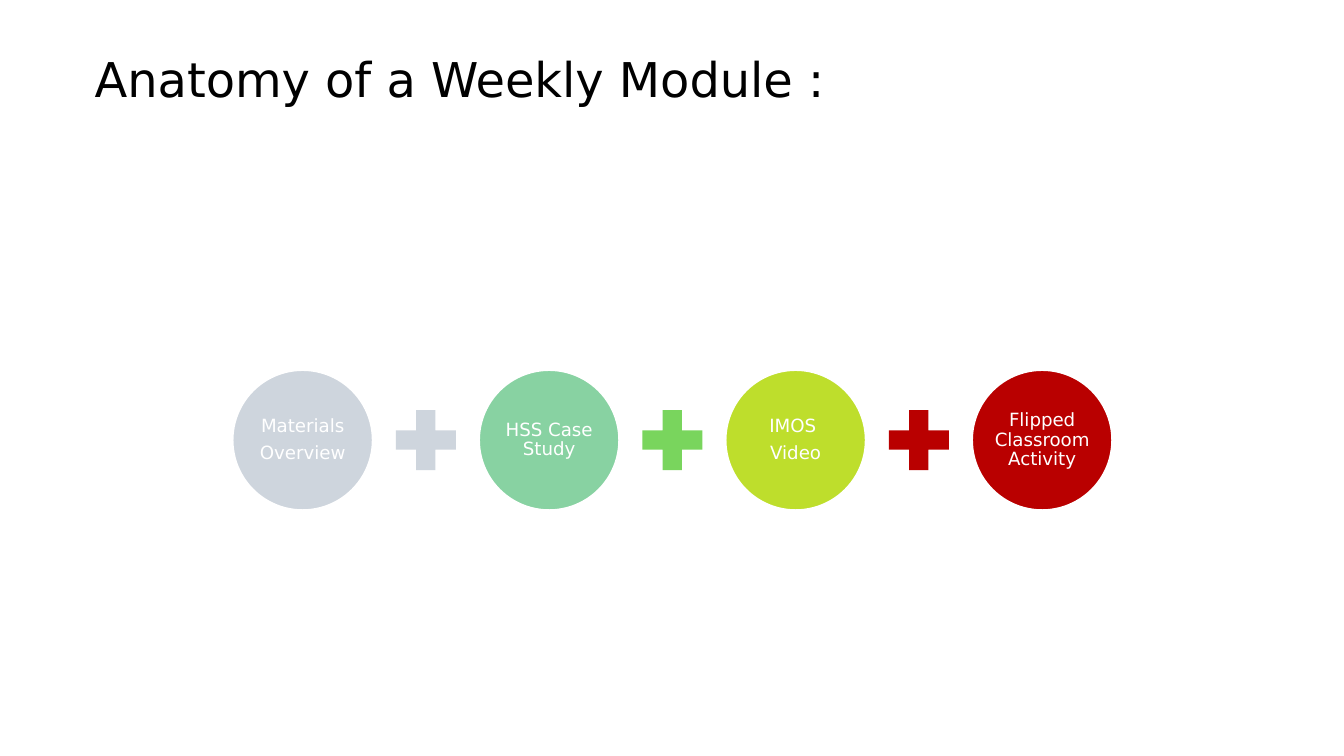
from pptx import Presentation
from pptx.dml.color import RGBColor
from pptx.enum.shapes import MSO_SHAPE
from pptx.enum.text import MSO_ANCHOR, PP_ALIGN
from pptx.util import Pt

FONT = "DejaVu Sans"
# Circle text, circle colour, colour of the plus that follows
STEPS = [
    (["Materials", "Overview"], "CED5DD", "CED5DD"),
    (["HSS Case Study"], "88D2A2", "79D55D"),
    (["IMOS ", "Video"], "BEDE2C", "B90000"),
    (["Flipped Classroom Activity"], "B90000", None),
]


def color(value):
    return RGBColor.from_string(value)


def style_font(p, size, value):
    for r in p.runs:
        r.font.name = FONT
        r.font.size = Pt(size)
        r.font.color.rgb = color(value)


def add_filled(s, kind, x, y, size, fill):
    sp = s.shapes.add_shape(kind, Pt(x), Pt(y), Pt(size), Pt(size))
    sp.shadow.inherit = False
    sp.fill.solid()
    sp.fill.fore_color.rgb = color(fill)
    sp.line.fill.background()
    return sp


def add_title(s, x, y, w, h):
    tf = s.shapes.add_textbox(Pt(x), Pt(y), Pt(w), Pt(h)).text_frame
    tf.word_wrap = True
    tf.vertical_anchor = MSO_ANCHOR.BOTTOM
    tf.margin_bottom = Pt(43.4)
    tf.text = "Anatomy of a Weekly Module :"
    style_font(tf.paragraphs[0], 34.2, "000000")


def add_circle(s, x, y, size, lines, fill):
    sp = add_filled(s, MSO_SHAPE.OVAL, x, y, size, fill)
    sp.line.color.rgb = color("FFFFFF")
    sp.line.width = Pt(2)
    tf = sp.text_frame
    tf.word_wrap = True
    tf.vertical_anchor = MSO_ANCHOR.MIDDLE
    tf.margin_left = tf.margin_right = tf.margin_top = tf.margin_bottom = Pt(1.3)
    tf.text = "\n".join(lines)
    for p in tf.paragraphs:
        p.alignment = PP_ALIGN.CENTER
        p.line_spacing = 0.9
        p.space_after = Pt(5)
        style_font(p, 13, "FFFFFF")


def add_equation(s, x, y, w, h):
    """Circles of the box height, with a plus centred in each gap."""
    plus = 0.58 * h
    pitch = (w - h) / (len(STEPS) - 1)
    for i, (lines, fill, plus_fill) in enumerate(STEPS):
        left = x + i * pitch
        add_circle(s, left, y, h, lines, fill)
        if plus_fill:
            plus_x = left + (pitch + h - plus) / 2
            add_filled(s, MSO_SHAPE.MATH_PLUS, plus_x, y + (h - plus) / 2,
                       plus, plus_fill)


def main():
    prs = Presentation()
    prs.slide_width, prs.slide_height = Pt(960), Pt(540)
    s = prs.slides.add_slide(prs.slide_layouts[6])
    # Title
    add_title(s, 60.5, 24, 840, 96)
    # Row of circles and pluses
    add_equation(s, 165.8, 264, 629, 100.8)
    prs.save("out.pptx")


if __name__ == "__main__":
    main()
